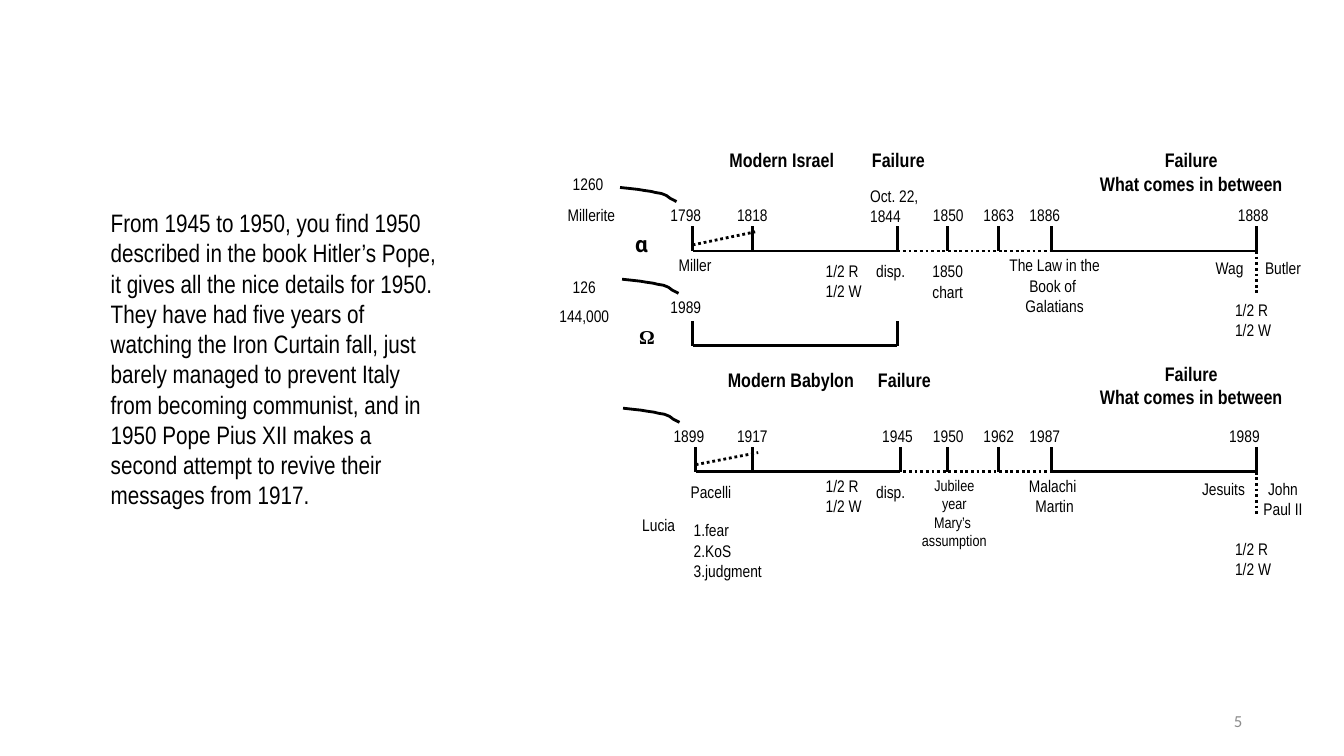
from dataclasses import dataclass
from lxml.etree import SubElement
from pptx import Presentation
from pptx.dml.color import RGBColor
from pptx.enum.dml import MSO_LINE
from pptx.enum.shapes import MSO_CONNECTOR
from pptx.enum.text import MSO_ANCHOR, PP_ALIGN
from pptx.oxml.ns import qn
from pptx.util import Cm, Pt

HUES = {"ink": "000000", "gray": "8C8C8C"}
LEFT, MID, RIGHT = PP_ALIGN.LEFT, PP_ALIGN.CENTER, PP_ALIGN.RIGHT
TICK = 0.25
HALVES = "1/2 R\n1/2 W"
BETWEEN = "Failure\nWhat comes in between"
BEND = [(0.18, 0.02), (0.24, 0.03), (0.31, 0.04), (0.35, 0.05), (0.41, 0.06),
        (0.46, 0.08), (0.50, 0.11), (0.54, 0.13), (0.56, 0.14)]
STORY = (
    "From 1945 to 1950, you find 1950 described in the book Hitler’s Pope, it gives "
    "all the nice details for 1950. They have had five years of watching the Iron "
    "Curtain fall, just barely managed to prevent Italy from becoming communist, and "
    "in 1950 Pope Pius XII makes a second attempt to revive their messages from 1917."
)


@dataclass
class Note:
    text: str
    x: float
    y: float
    wide: float
    high: float = 0.25
    align: PP_ALIGN = LEFT
    size: int = 12
    bold: bool = False
    font: str = "Arial Narrow"


@dataclass
class Era:
    base: float
    start: float
    dots: tuple[float, float]
    ramp: tuple[float, float]
    years: list[str]
    last: PP_ALIGN


ERAS = [
    Era(2.49, 6.87, (8.90, 10.46), (2.43, 2.30),
        ["1798", "1818", "1850", "1863", "1886", "1888"], MID),
    Era(4.68, 6.90, (8.96, 10.52), (4.61, 4.49),
        ["1899", "1917", "1950", "1962", "1987", "1989"], LEFT),
]

ARCS = [(6.15, 1.86), (6.17, 2.77), (6.18, 4.05)]

HEADS = [
    Note("Modern Israel", 6.61, 1.43, 2.29),
    Note("Failure", 8.40, 1.43, 1.02),
    Note(BETWEEN, 10.67, 1.43, 2.29, 0.56),
    Note("Modern Babylon", 6.70, 3.61, 2.29),
    Note("Failure", 8.46, 3.61, 1.02),
    Note(BETWEEN, 10.67, 3.55, 2.29, 0.56),
]

NOTES = [
    Note("Millerite", 5.52, 1.99, 0.69, 0.31, MID),
    Note("α", 6.26, 2.24, 0.46, size=16, bold=True, font="Roboto"),
    Note("144,000", 5.46, 2.99, 0.67, 0.31, MID),
    Note("Ω", 6.30, 3.18, 0.46, size=14, bold=True, font="Times New Roman"),
    Note("1989", 6.61, 2.90, 0.62),
    Note("1260", 5.64, 1.68, 0.62),
    Note("126", 5.64, 2.71, 0.62),
    Note("Miller", 6.69, 2.49, 0.62, 0.31),
    Note("Pacelli", 6.81, 4.74, 0.62),
    Note("Lucia", 6.33, 5.07, 0.50),
    Note("Oct. 22,\n1844", 8.59, 1.80, 0.56, 0.56),
    Note("1945", 8.71, 4.18, 0.44),
    Note("disp.", 8.65, 2.55, 0.50),
    Note("disp.", 8.65, 4.74, 0.50),
    Note(HALVES, 8.15, 2.55, 0.50, 0.56),
    Note(HALVES, 8.15, 4.68, 0.50, 0.56),
    Note(HALVES, 12.21, 2.93, 0.50, 0.56),
    Note(HALVES, 12.21, 5.30, 0.50, 0.56),
    Note("1850\nchart", 9.15, 2.55, 0.50, 0.69, MID),
    Note("Jubilee year\nMary’s \nassumption", 9.09, 4.68, 0.75, 1.06, MID, 11),
    Note("The Law in the Book of \nGalatians", 9.93, 2.49, 1.06, 0.88, MID),
    Note("Malachi \vMartin", 9.93, 4.68, 1.06, 0.56, MID),
    Note("Wag", 11.96, 2.52, 0.47, align=MID),
    Note("Butler", 12.49, 2.52, 0.47, align=MID),
    Note("Jesuits", 11.84, 4.71, 0.59, align=MID),
    Note("John Paul II", 12.49, 4.71, 0.47, 0.59, MID),
]


def inch(value: float) -> Cm:
    return Cm(value * 2.54)


def write(slide, text: str, x: float, y: float, wide: float, high: float, *,
          size: int = 12, font: str = "Arial Narrow", bold: bool = False,
          align: PP_ALIGN = LEFT, hue: str = "ink", pad: tuple = (0.04, 0.04),
          anchor: MSO_ANCHOR = MSO_ANCHOR.TOP, count: bool = False) -> None:
    box = slide.shapes.add_textbox(inch(x), inch(y), inch(wide), inch(high))
    frame = box.text_frame
    frame.word_wrap = True
    frame.vertical_anchor = anchor
    frame.margin_left = frame.margin_right = inch(pad[0])
    frame.margin_top = frame.margin_bottom = inch(pad[1])
    for index, line in enumerate(text.split("\n")):
        para = frame.add_paragraph() if index else frame.paragraphs[0]
        para.text = line
        para.alignment = align
        for run in para.runs:
            run.font.size = Pt(size)
            run.font.name = font
            run.font.bold = bold
            run.font.color.rgb = RGBColor.from_string(HUES[hue])
        if count:
            props = para._p.get_or_add_pPr()
            props.set("marL", "0")
            props.set("indent", str(-inch(0.2)))
            SubElement(props, qn("a:buAutoNum"), type="arabicPeriod")


def ink(line) -> None:
    line.color.rgb = RGBColor.from_string(HUES["ink"])
    line.width = Pt(2)


def rule(slide, x1: float, y1: float, x2: float, y2: float, dots: bool = False) -> None:
    link = slide.shapes.add_connector(
        MSO_CONNECTOR.STRAIGHT, inch(x1), inch(y1), inch(x2), inch(y2))
    ink(link.line)
    if dots:
        link.line.dash_style = MSO_LINE.ROUND_DOT
    SubElement(link._element.spPr, qn("a:effectLst"))


def span(slide, x1: float, x2: float, base: float) -> None:
    rule(slide, x1, base, x2, base)
    for x in (x1, x2):
        rule(slide, x, base, x, base - TICK)


def arc(slide, x: float, y: float) -> None:
    pen = slide.shapes.build_freeform(inch(x), inch(y))
    pen.add_line_segments([(inch(x + dx), inch(y + dy)) for dx, dy in BEND], close=False)
    curve = pen.convert_to_shape()
    curve.shadow.inherit = False
    curve.fill.background()
    ink(curve.line)


def draw(slide, era: Era) -> None:
    base, start = era.base, era.start
    span(slide, start, start + 2.03, base)
    span(slide, 10.43, 12.46, base)
    for x in (7.46, 9.40, 9.90):
        rule(slide, x, base, x, base - TICK)
    rule(slide, era.dots[0], base, era.dots[1], base, dots=True)
    rule(slide, 12.46, base, 12.46, base + 0.44, dots=True)
    rule(slide, start, era.ramp[0], start + 0.62, era.ramp[1], dots=True)
    slots = [(start - 0.26, 0.62, LEFT), (7.27, 0.44, LEFT), (9.21, 0.39, MID),
             (9.71, 0.39, MID), (10.17, 0.62, LEFT), (12.15, 0.56, era.last)]
    for year, (x, wide, align) in zip(era.years, slots):
        write(slide, year, x, base - 0.5, wide, 0.25, align=align)


def main() -> None:
    deck = Presentation()
    deck.slide_width, deck.slide_height = inch(13.33), inch(7.5)
    slide = deck.slides.add_slide(deck.slide_layouts[6])
    write(slide, "5", 9.42, 6.95, 3, 0.4, font="Calibri", hue="gray", align=RIGHT,
          pad=(0.1, 0.05), anchor=MSO_ANCHOR.MIDDLE)
    write(slide, STORY, 1, 2.01, 3.46, 3.13, size=18, pad=(0.1, 0.05))
    for era in ERAS:
        draw(slide, era)
    span(slide, 6.87, 8.90, 3.43)
    for x, y in ARCS:
        arc(slide, x, y)
    for head in HEADS:
        write(slide, head.text, head.x, head.y, head.wide, head.high,
              size=14, bold=True, align=MID)
    for note in NOTES:
        write(slide, note.text, note.x, note.y, note.wide, note.high, size=note.size,
              font=note.font, bold=note.bold, align=note.align)
    write(slide, "fear\nKoS\njudgment", 6.84, 5.12, 0.91, 0.69, count=True)
    deck.save("out.pptx")


if __name__ == "__main__":
    main()
